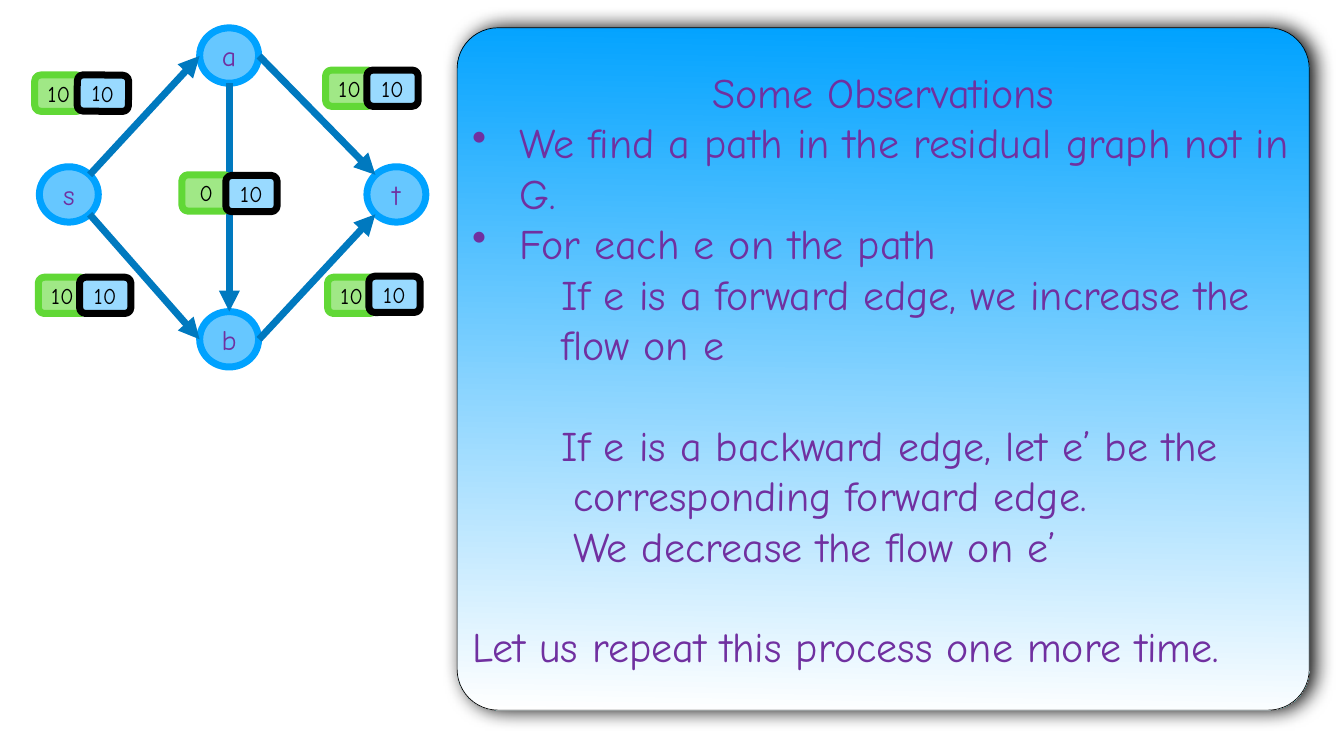
from lxml.etree import SubElement
from pptx import Presentation
from pptx.dml.color import RGBColor
from pptx.enum.shapes import MSO_CONNECTOR, MSO_SHAPE as SHAPE
from pptx.enum.text import MSO_ANCHOR, PP_ALIGN as ALIGN
from pptx.oxml import parse_xml
from pptx.oxml.ns import nsdecls, qn
from pptx.util import Cm, Pt

FONT = "Comic Neue"
PURPLE = RGBColor(0x70, 0x30, 0xA0)
BLACK = RGBColor(0, 0, 0)
WHITE = RGBColor(255, 255, 255)
BLUE = RGBColor(0x00, 0xA2, 0xFF)
NODE_FILL = RGBColor(0x66, 0xC7, 0xFF)
EDGE_BLUE = RGBColor(0x00, 0x79, 0xBF)
FLOW_FILL = RGBColor(0xA0, 0xE8, 0x86)
FLOW_LINE = RGBColor(0x61, 0xD8, 0x36)
CAPACITY_FILL = RGBColor(0x99, 0xDA, 0xFF)

NODE_WIDTH, NODE_HEIGHT = 2.97, 2.79
LABEL_HEIGHT = 1.83
FLOW_WIDTH, CAPACITY_WIDTH = 2.44, 2.59

# Name and centre of each node
NODES = [("s", 3.47, 9.8), ("a", 11.55, 2.8), ("b", 11.55, 17.1), ("t", 19.98, 9.8)]

# Start and end of each edge
EDGES = [
    (4.52, 8.81, 10.06, 2.82),
    (4.52, 10.8, 10.06, 17.1),
    (13.06, 17.1, 18.92, 10.8),
    (13.06, 2.82, 18.92, 8.81),
    (11.56, 4.2, 11.56, 15.7),
]

# Flow, its left and top, then left and top of the capacity, and its rotation
LABELS = [
    ("10", 1.93, 13.97, 4.01, 13.97, 0),
    ("10", 16.41, 3.53, 18.49, 3.53, 0),
    ("10", 16.51, 13.97, 18.59, 13.92, 0),
    ("10", 1.75, 3.78, 3.89, 3.78, 0.6),
    ("0", 9.17, 8.81, 11.38, 8.84, 0),
]

# Text, left indent, space before in points, bulleted
OBSERVATIONS = [
    ("We find a path in the residual graph not in G.", 2.39, 0, True),
    ("For each e on the path", 2.39, 0, True),
    ("If e is a forward edge, we increase the", 4.52, 0, False),
    ("flow on e", 4.52, 0, False),
    ("If e is a backward edge, let e’ be the", 4.52, 72, False),
    ("corresponding forward edge.", 5.1, 0, False),
    ("We decrease the flow on e’", 5.1, 0, False),
    ("Let us repeat this process one more time.", 0, 72, False),
]


def style_font(para, size, color):
    para.font.name = FONT
    para.font.size = Pt(size)
    para.font.color.rgb = color


def add_box(slide, kind, left, top, width, height, line, line_width):
    box = slide.shapes.add_shape(kind, Cm(left), Cm(top), Cm(width), Cm(height))
    box.shadow.inherit = False
    box.line.color.rgb = line
    box.line.width = Pt(line_width)
    frame = box.text_frame
    frame.word_wrap = True
    frame.vertical_anchor = MSO_ANCHOR.MIDDLE
    frame.margin_left = frame.margin_right = Cm(0.15)
    frame.margin_top = frame.margin_bottom = Cm(0.15)
    return box


def add_label(slide, kind, text, area, fill, line, size, color):
    """Add a filled shape with one centred text; area is left, top, width, height."""
    box = add_box(slide, kind, *area, line, 10)
    box.fill.solid()
    box.fill.fore_color.rgb = fill
    para = box.text_frame.paragraphs[0]
    para.text = text
    para.alignment = ALIGN.CENTER
    style_font(para, size, color)
    return box


def add_node(slide, name, x, y):
    area = (x - NODE_WIDTH / 2, y - NODE_HEIGHT / 2, NODE_WIDTH, NODE_HEIGHT)
    add_label(slide, SHAPE.OVAL, name, area, NODE_FILL, BLUE, 40, PURPLE)


def add_edge(slide, *ends):
    edge = slide.shapes.add_connector(MSO_CONNECTOR.STRAIGHT, *map(Cm, ends))
    edge.line.color.rgb = EDGE_BLUE
    edge.line.width = Pt(10)
    SubElement(edge.line._get_or_add_ln(), qn("a:tailEnd"), type="triangle")
    SubElement(edge._element.spPr, qn("a:effectLst"))


def add_flow_and_capacity(slide, flow, flow_left, flow_top, left, top, rotation):
    add_label(slide, SHAPE.ROUNDED_RECTANGLE, flow,
              (flow_left, flow_top, FLOW_WIDTH, LABEL_HEIGHT),
              FLOW_FILL, FLOW_LINE, 32, BLACK)
    capacity = add_label(slide, SHAPE.ROUNDED_RECTANGLE, "10",
                         (left, top, CAPACITY_WIDTH, LABEL_HEIGHT),
                         CAPACITY_FILL, BLACK, 32, BLACK)
    capacity.rotation = rotation


def add_shadow(box):
    effects = box._element.spPr.find(qn("a:effectLst"))
    effects.append(parse_xml(
        f'<a:outerShdw {nsdecls("a")} blurRad="{Pt(28)}" dist="{Pt(9)}" dir="0" '
        'rotWithShape="0"><a:srgbClr val="000000"><a:alpha val="97000"/>'
        '</a:srgbClr></a:outerShdw>'))


def add_observation(frame, text, indent, space, bulleted):
    para = frame.add_paragraph()
    para.text = text
    para.alignment = ALIGN.LEFT
    para.space_before = Pt(space)
    properties = para._p.get_or_add_pPr()
    properties.set("marL", str(Cm(indent)))
    if bulleted:
        properties.set("indent", str(-Cm(indent)))
        SubElement(properties, qn("a:buChar"), char="•")
    style_font(para, 60, PURPLE)


def add_observation_panel(slide):
    panel = add_box(slide, SHAPE.ROUNDED_RECTANGLE, 23.04, 1.4, 42.95, 34.39, BLACK, 1)
    panel.adjustments[0] = 0.06
    panel.fill.gradient()
    panel.fill.gradient_angle = 269
    for stop, color in zip(panel.fill.gradient_stops, (BLUE, WHITE)):
        stop.color.rgb = color
    add_shadow(panel)
    heading = panel.text_frame.paragraphs[0]
    heading.text = "Some Observations"
    heading.alignment = ALIGN.CENTER
    style_font(heading, 60, PURPLE)
    for observation in OBSERVATIONS:
        add_observation(panel.text_frame, *observation)


def main():
    deck = Presentation()
    deck.slide_width, deck.slide_height = Cm(67.74), Cm(38.1)
    slide = deck.slides.add_slide(deck.slide_layouts[6])
    for node in NODES:
        add_node(slide, *node)
    for edge in EDGES:
        add_edge(slide, *edge)
    for label in LABELS:
        add_flow_and_capacity(slide, *label)
    add_observation_panel(slide)
    deck.save("out.pptx")


if __name__ == "__main__":
    main()
